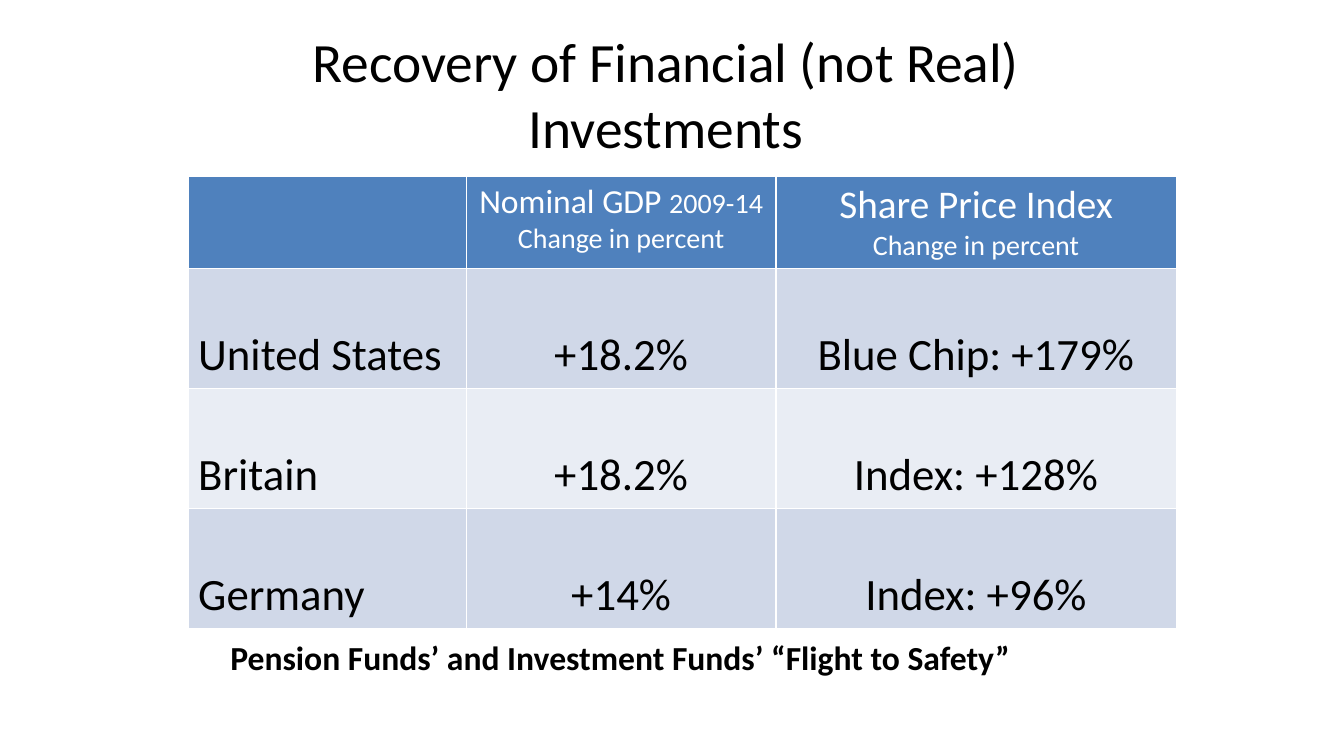
from lxml.etree import SubElement
from pptx import Presentation
from pptx.dml.color import RGBColor
from pptx.enum.text import MSO_ANCHOR as Anchor, PP_ALIGN as Align
from pptx.oxml.ns import qn
from pptx.util import Inches, Pt

WIDTH, HEIGHT = Inches(13.33), Inches(7.5)
FONT = "Calibri"
COLORS = {"text": "000000", "light": "FFFFFF", "header": "4F81BD",
          "odd": "D0D8E8", "even": "E9EDF4"}
COLUMN_WIDTHS = (2.76, 3.07, 3.97)
HEADER_HEIGHT, ROW_HEIGHT = 0.91, 1.19

# Each header cell holds lines, and each line holds (text, size) spans.
HEADERS = (
    (),
    ((("Nominal GDP ", 24), ("2009-14", 20)), (("Change in percent", 20),)),
    ((("Share Price Index", 28),), (("Change in percent", 20),)),
)
ROWS = (
    ("United States", "+18.2%", "Blue Chip: +179%"),
    ("Britain", "+18.2%", "Index: +128%"),
    ("Germany", "+14%", "Index: +96%"),
)


def area(left, top, width, height):
    """Turn shares of the slide's size into lengths."""
    return (round(WIDTH * left), round(HEIGHT * top),
            round(WIDTH * width), round(HEIGHT * height))


def style_font(font, size, color="text", bold=False):
    font.name, font.size, font.bold = FONT, Pt(size), bold
    font.color.rgb = RGBColor.from_string(COLORS[color])


def write(frame, text, size, align, bold=False):
    para = frame.paragraphs[0]
    para.text, para.alignment = text, align
    style_font(para.font, size, bold=bold)
    return para


def add_title(page, text):
    title = page.shapes.title
    title.left, title.top, title.width, title.height = area(0.125, 0.04, 0.741, 0.167)
    title.text_frame.word_wrap = True
    title.text_frame.vertical_anchor = Anchor.MIDDLE
    write(title.text_frame, text, 39.6, Align.CENTER)


def paint_cell(cell, color):
    """Fill a cell and give it thin white borders."""
    properties = cell._tc.get_or_add_tcPr()
    for side in ("a:lnL", "a:lnR", "a:lnT", "a:lnB"):
        line = SubElement(properties, qn(side), w=str(Pt(1)))
        fill = SubElement(line, qn("a:solidFill"))
        SubElement(fill, qn("a:srgbClr"), val=COLORS["light"])
    cell.fill.solid()
    cell.fill.fore_color.rgb = RGBColor.from_string(COLORS[color])


def fill_header(cell, lines):
    paint_cell(cell, "header")
    frame = cell.text_frame
    for index, spans in enumerate(lines):
        para = frame.add_paragraph() if index else frame.paragraphs[0]
        para.alignment = Align.CENTER
        for text, size in spans:
            span = para.add_run()
            span.text = text
            style_font(span.font, size, "light")


def add_index_table(page):
    height = (HEADER_HEIGHT + ROW_HEIGHT * len(ROWS)) / HEIGHT.inches
    width = sum(COLUMN_WIDTHS) / WIDTH.inches
    table = page.shapes.add_table(len(ROWS) + 1, len(HEADERS),
                                  *area(0.14, 0.233, width, height)).table
    for column, column_width in zip(table.columns, COLUMN_WIDTHS):
        column.width = Inches(column_width)
    table.rows[0].height = Inches(HEADER_HEIGHT)
    for column, lines in enumerate(HEADERS):
        fill_header(table.cell(0, column), lines)
    for row, texts in enumerate(ROWS, 1):
        table.rows[row].height = Inches(ROW_HEIGHT)
        for column, text in enumerate(texts):
            cell = table.cell(row, column)
            paint_cell(cell, "odd" if row % 2 else "even")
            align = Align.CENTER if column else Align.LEFT
            write(cell.text_frame, text, 32, align).line_spacing = 2.0


def add_note(page, text):
    box = page.shapes.add_textbox(*area(0.164, 0.836, 0.644, 0.067))
    box.text_frame.word_wrap = True
    write(box.text_frame, text, 24, Align.LEFT, bold=True)


def main():
    deck = Presentation()
    deck.slide_width, deck.slide_height = WIDTH, HEIGHT
    page = deck.slides.add_slide(deck.slide_layouts.get_by_name("Title Only"))
    add_title(page, "Recovery of Financial (not Real) Investments")
    add_index_table(page)
    add_note(page, "Pension Funds’ and Investment Funds’ “Flight to Safety”")
    deck.save("out.pptx")


if __name__ == "__main__":
    main()
